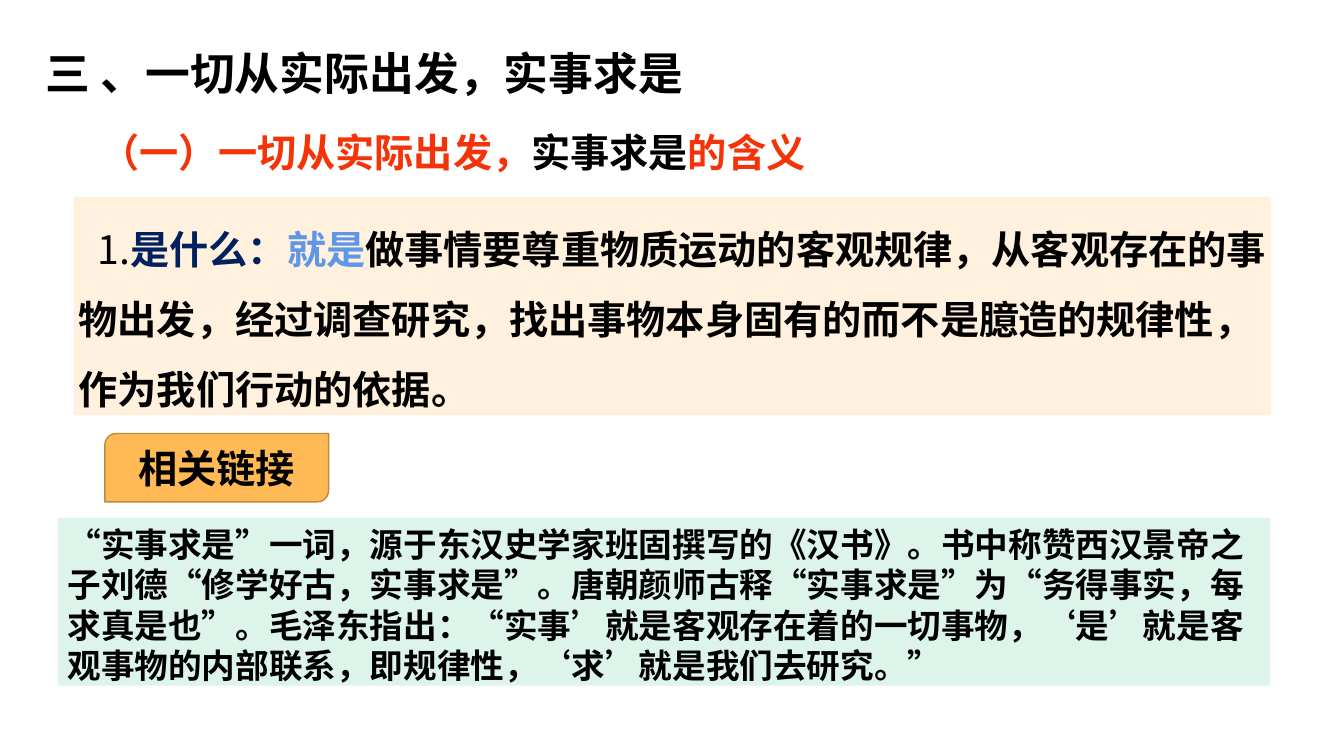
from pptx import Presentation
from pptx.dml.color import RGBColor
from pptx.enum.lang import MSO_LANGUAGE_ID
from pptx.enum.shapes import MSO_SHAPE
from pptx.enum.text import MSO_ANCHOR, PP_ALIGN
from pptx.oxml.ns import qn
from pptx.util import Inches, Pt
from lxml.etree import SubElement

NOTO, ARIAL = "Noto Sans CJK SC", "Arial"
HUES = {"ink": "000000", "red": "F43308", "navy": "002060", "blue": "6096E6",
        "cream": "FFF1DD", "mint": "DDF4EA", "gold": "FFBA55", "rim": "BD8A3F"}

deck = Presentation()
deck.slide_width, deck.slide_height = Inches(13.33), Inches(7.5)
# Lengths are hundredths of the slide's width and height
col, row = deck.slide_width / 100, deck.slide_height / 100
slide = deck.slides.add_slide(deck.slide_layouts[5])


def hue(name):
    return RGBColor.from_string(HUES[name])


def write(shape, size, runs, pitch=None, pads=(0.1, 0.05, 0.1, 0.05),
          anchor=MSO_ANCHOR.TOP, align=PP_ALIGN.LEFT):
    frame = shape.text_frame
    frame.word_wrap, frame.vertical_anchor = True, anchor
    (frame.margin_left, frame.margin_top,
     frame.margin_right, frame.margin_bottom) = map(Inches, pads)
    para = frame.paragraphs[0]
    para.alignment = align
    para.space_before = Pt(0)
    if pitch:
        para.line_spacing = Pt(pitch)
    for text, tint, face, bold in runs:
        run = para.add_run()
        run.text = text
        font = run.font
        font.size, font.bold, font.name = Pt(size), bold, face
        font.color.rgb = hue(tint)
        font.language_id = MSO_LANGUAGE_ID.SIMPLIFIED_CHINESE
        SubElement(run._r.get_or_add_rPr(), qn("a:ea"), typeface=NOTO)
    return para


# Title
title = slide.shapes.title
title.left, title.top = 0, 0
title.width, title.height = int(52.2 * col), int(13.1 * row)
write(title, 32, [("三 、一切从实际出发，实事求是", "ink", NOTO, True)],
      57, (0.45, 0.2, 0, 0))

# Panels, from back to front: kind, place, fill
panels = {}
for name, kind, x, y, w, h, fill in [
        ("meaning", MSO_SHAPE.RECTANGLE, 5.48, 26, 89.1, 28.95, "cream"),
        ("heading", MSO_SHAPE.RECTANGLE, 6.75, 12.8, 54, 10.8, None),
        ("story", MSO_SHAPE.RECTANGLE, 4.28, 68.55, 90.25, 22.15, "mint"),
        ("link", MSO_SHAPE.ROUND_2_DIAG_RECTANGLE, 7.8, 57.35, 16.65, 9.05, "gold")]:
    place = [int(n) for n in (x * col, y * row, w * col, h * row)]
    if fill:
        panel = slide.shapes.add_shape(kind, *place)
        panel.shadow.inherit = False
        panel.fill.solid()
        panel.fill.fore_color.rgb = hue(fill)
        panel.line.fill.background()
    else:
        panel = slide.shapes.add_textbox(*place)
    panels[name] = panel

# Meaning, with an indented first line
para = write(panels["meaning"], 28, [
    ("1.", "ink", NOTO, False),
    ("是什么：", "navy", NOTO, True),
    ("就是", "blue", NOTO, True),
    ("做事情要尊重物质运动的客观规律，从客观存在的事物出发，经过调查研究，"
     "找出事物本身固有的而不是臆造的规律性，作为我们行动的依据。", "ink", NOTO, True),
], 50, (0.05, 0.06, 0.05, 0.03))
para._p.get_or_add_pPr().set("indent", str(Inches(0.19)))

# Heading
write(panels["heading"], 28, [
    ("（一）一切从实际出发，", "red", ARIAL, True),
    ("实事求是", "ink", NOTO, True),
    ("的含义", "red", ARIAL, True),
], 50, (0.1, 0.09, 0, 0))

# Story behind the phrase
write(panels["story"], 24, [(
    "“实事求是”一词，源于东汉史学家班固撰写的《汉书》。书中称赞西汉景帝之子刘德"
    "“修学好古，实事求是”。唐朝颜师古释“实事求是”为“务得事实，每求真是也”。"
    "毛泽东指出：“实事’就是客观存在着的一切事物，‘是’就是客观事物的内部联系，"
    "即规律性，‘求’就是我们去研究。”", "ink", NOTO, True)], 29)

# Link label
panels["link"].line.color.rgb = hue("rim")
panels["link"].line.width = Pt(1)
write(panels["link"], 28, [("相关链接", "ink", ARIAL, True)],
      anchor=MSO_ANCHOR.MIDDLE, align=PP_ALIGN.CENTER)

deck.save("out.pptx")
